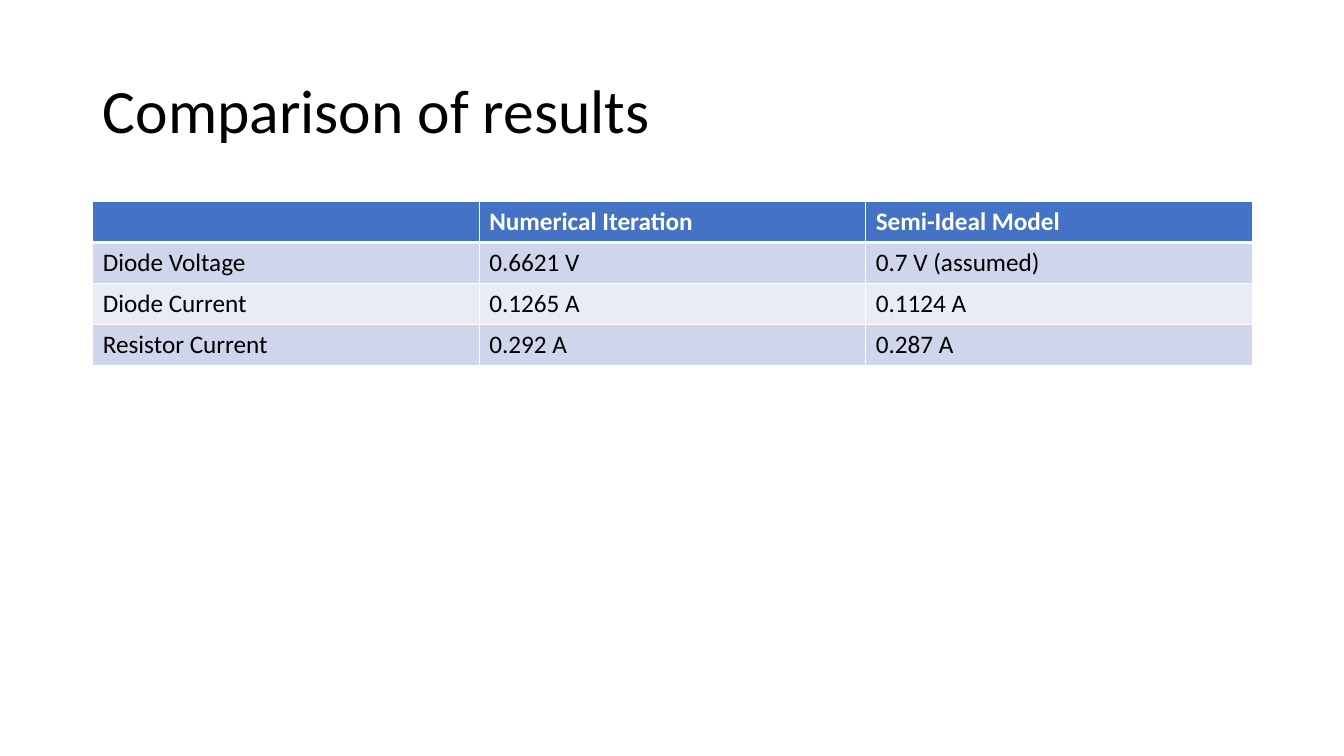
from lxml import etree
from pptx import Presentation
from pptx.dml.color import RGBColor
from pptx.enum.text import MSO_ANCHOR, PP_ALIGN
from pptx.oxml.ns import qn
from pptx.util import Inches, Pt

LEFT = PP_ALIGN.LEFT
MIDDLE = MSO_ANCHOR.MIDDLE
TITLE_ONLY = 5
COLORS = {
    "text": "000000",
    "white": "FFFFFF",
    "header": "4472C4",
    "odd": "CFD5EA",
    "even": "E9EBF5",
}
RESULTS = [
    ["", "Numerical Iteration", "Semi-Ideal Model"],
    ["Diode Voltage", "0.6621 V", "0.7 V (assumed)"],
    ["Diode Current", "0.1265 A", "0.1124 A"],
    ["Resistor Current", "0.292 A", "0.287 A"],
]


class SlideBuilder:
    font = "Calibri"

    def __init__(self, prs):
        self.slide = prs.slides.add_slide(prs.slide_layouts[TITLE_ONLY])

    def color(self, name):
        return RGBColor.from_string(COLORS[name])

    def format_runs(self, p, size, color, bold=False):
        for r in p.runs:
            r.font.name = self.font
            r.font.size = Pt(size)
            r.font.bold = bold
            r.font.color.rgb = self.color(color)

    def title(self, text, left, top, width, height):
        sp = self.slide.shapes.title
        sp.left, sp.top = Inches(left), Inches(top)
        sp.width, sp.height = Inches(width), Inches(height)
        tf = sp.text_frame
        tf.text = text
        tf.word_wrap = True
        tf.vertical_anchor = MIDDLE
        p = tf.paragraphs[0]
        p.alignment = LEFT
        p.line_spacing = 0.9
        self.format_runs(p, 44, "text")

    def border(self, cell, side, width):
        tc_pr = cell._tc.get_or_add_tcPr()
        ln = etree.SubElement(tc_pr, qn(f"a:ln{side}"), w=str(Pt(width)))
        fill = etree.SubElement(ln, qn("a:solidFill"))
        etree.SubElement(fill, qn("a:srgbClr"), val=COLORS["white"])

    def cell(self, cell, text, row):
        header = row == 0
        cell.text = text
        self.format_runs(cell.text_frame.paragraphs[0], 18,
                         "white" if header else "text", header)
        for side in "LRTB":
            thick = (row, side) in ((0, "B"), (1, "T"))
            self.border(cell, side, 3 if thick else 1)
        cell.fill.solid()
        band = "odd" if row % 2 else "even"
        cell.fill.fore_color.rgb = self.color("header" if header else band)

    def table(self, rows, left, top, width, row_height):
        frame = self.slide.shapes.add_table(
            len(rows), len(rows[0]), Inches(left), Inches(top),
            Inches(width), Inches(row_height * len(rows)))
        table = frame.table
        for i, values in enumerate(rows):
            for j, text in enumerate(values):
                self.cell(table.cell(i, j), text, i)


def main():
    prs = Presentation()
    prs.slide_width, prs.slide_height = Inches(13.33), Inches(7.5)
    s = SlideBuilder(prs)
    s.title("Comparison of results", 0.92, 0.4, 11.5, 1.45)
    s.table(RESULTS, 0.92, 2, 11.5, 0.405)
    prs.save("out.pptx")


if __name__ == "__main__":
    main()
